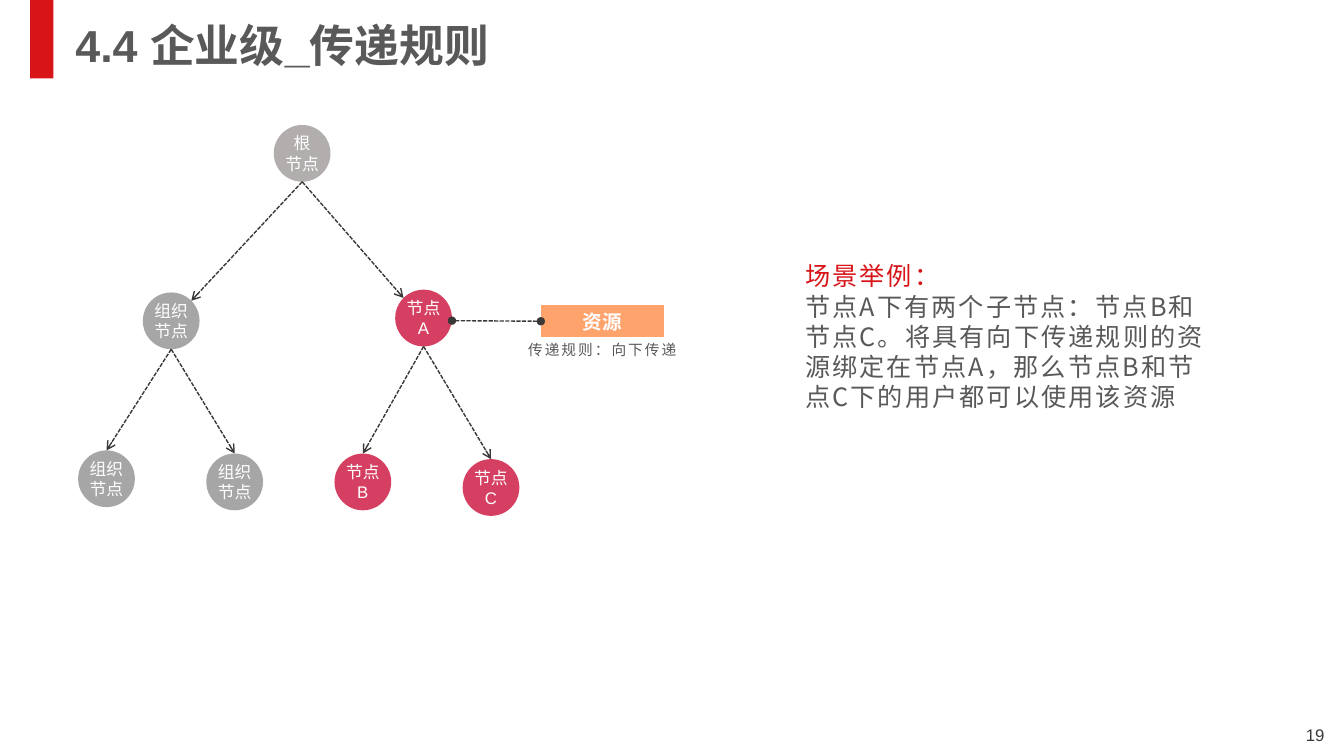
from math import sqrt

from lxml.etree import SubElement
from pptx import Presentation
from pptx.dml.color import RGBColor
from pptx.enum.dml import MSO_LINE
from pptx.enum.shapes import MSO_CONNECTOR, MSO_SHAPE
from pptx.enum.text import MSO_ANCHOR, MSO_AUTO_SIZE, PP_ALIGN
from pptx.oxml.ns import qn
from pptx.util import Cm, Pt

COLORS = {
    "red": "D71418",
    "dark": "3B3838",
    "text": "595959",
    "root": "B2AEAE",
    "gray": "A6A6A6",
    "pink": "D54062",
    "orange": "FFA36C",
    "white": "FFFFFF",
}
LATIN = "Arial"
CJK = "Noto Sans CJK SC"
DIAMETER = 1.43
RADIUS = DIAMETER / 2
DIAGONAL = RADIUS / sqrt(2)


def rgb(name):
    return RGBColor.from_string(COLORS[name])


def write(frame, text, size, color="text", font=CJK, bold=False, align=PP_ALIGN.LEFT,
          anchor=MSO_ANCHOR.TOP, spacing=1.0, tracking=0, inset=0.25, wrap=True,
          first_color=None):
    """Fill a text frame, one paragraph per line of text; tracking is in points."""
    frame.word_wrap = wrap
    frame.auto_size = MSO_AUTO_SIZE.NONE
    frame.vertical_anchor = anchor
    frame.margin_left = frame.margin_right = Cm(inset)
    frame.margin_top = frame.margin_bottom = Cm(inset / 2)
    for index, line in enumerate(text.split("\n")):
        paragraph = frame.paragraphs[0] if index == 0 else frame.add_paragraph()
        paragraph.alignment = align
        paragraph.line_spacing = spacing
        run = paragraph.add_run()
        run.text = line
        run.font.size = Pt(size)
        run.font.bold = bold
        run.font.name = font
        run.font.color.rgb = rgb(first_color if first_color and index == 0 else color)
        properties = run.font._element
        SubElement(properties, qn("a:ea")).set("typeface", CJK)
        if tracking:
            properties.set("spc", str(int(tracking * 100)))


class SlideBuilder:
    def __init__(self, slide):
        self.slide = slide

    def title(self, text, left, top, width, height):
        title = self.slide.shapes.title
        title.left, title.top, title.width, title.height = map(Cm, (left, top, width, height))
        write(title.text_frame, text, 32, font=LATIN, bold=True, anchor=MSO_ANCHOR.MIDDLE,
              spacing=0.9)

    def text(self, text, left, top, width, height, **style):
        box = self.slide.shapes.add_textbox(*map(Cm, (left, top, width, height)))
        write(box.text_frame, text, **style)

    def shape(self, kind, left, top, width, height, fill):
        shape = self.slide.shapes.add_shape(kind, *map(Cm, (left, top, width, height)))
        shape.shadow.inherit = False
        shape.fill.solid()
        shape.fill.fore_color.rgb = rgb(fill)
        shape.line.fill.background()
        return shape

    def node(self, text, left, top, fill):
        node = self.shape(MSO_SHAPE.OVAL, left, top, DIAMETER, DIAMETER, fill)
        write(node.text_frame, text, 12, color="white", font=LATIN, align=PP_ALIGN.CENTER,
              anchor=MSO_ANCHOR.MIDDLE, spacing=Pt(14.4), inset=0, wrap=False)
        return node

    def link(self, start, end, tail="arrow", head=None):
        """Draw a dashed connector between two points given in cm."""
        link = self.slide.shapes.add_connector(MSO_CONNECTOR.STRAIGHT, *map(Cm, start + end))
        link.line.color.rgb = rgb("dark")
        link.line.width = Pt(1)
        link.line.dash_style = MSO_LINE.SQUARE_DOT
        outline = link.line._get_or_add_ln()
        if head:
            SubElement(outline, qn("a:headEnd")).set("type", head)
        SubElement(outline, qn("a:tailEnd")).set("type", tail)
        SubElement(link._element.spPr, qn("a:effectLst"))
        return link


def main():
    presentation = Presentation()
    presentation.slide_width = Cm(33.87)
    presentation.slide_height = Cm(19.05)
    builder = SlideBuilder(presentation.slides.add_slide(presentation.slide_layouts[5]))

    builder.shape(MSO_SHAPE.RECTANGLE, 0.76, 0, 0.59, 1.98, "red")
    builder.title("4.4 企业级_传递规则", 1.65, 0.58, 29.21, 1.24)
    builder.text("19", 25.73, 18.01, 7.9, 1.02, size=12, color="dark", font=LATIN,
                 align=PP_ALIGN.RIGHT, anchor=MSO_ANCHOR.MIDDLE)

    # name: (text, left, top, fill, parent)
    tree = {
        "root": ("根\n节点", 6.9, 3.15, "root", None),
        "organization": ("组织\n节点", 3.6, 7.37, "gray", "root"),
        "a": ("节点\nA", 9.96, 7.3, "pink", "root"),
        "left unit": ("组织\n节点", 1.97, 11.35, "gray", "organization"),
        "right unit": ("组织\n节点", 5.2, 11.43, "gray", "organization"),
        "b": ("节点\nB", 8.43, 11.43, "pink", "a"),
        "c": ("节点\nC", 11.66, 11.57, "pink", "a"),
    }
    for text, left, top, fill, parent in tree.values():
        node = builder.node(text, left, top, fill)
        if parent is None:
            continue
        _, parent_left, parent_top, _, _ = tree[parent]
        start = (parent_left + RADIUS, parent_top + DIAMETER)
        center_x, center_y = left + RADIUS, top + RADIUS
        if parent == "root":
            side = 1 if center_x < start[0] else -1
            builder.link(start, (center_x + side * DIAGONAL, center_y - DIAGONAL))
        else:
            builder.link(start, (center_x, top)).end_connect(node, 0)

    resource = builder.shape(MSO_SHAPE.FLOWCHART_PROCESS, 13.63, 7.69, 3.1, 0.81, "orange")
    write(resource.text_frame, "资源", 14, color="white", bold=True, align=PP_ALIGN.CENTER,
          anchor=MSO_ANCHOR.MIDDLE)
    _, a_left, _, _, _ = tree["a"]
    binding = builder.link((13.63, 8.1), (a_left + DIAMETER, 8.08), tail="oval", head="oval")
    binding.begin_connect(resource, 1)

    builder.text("传递规则：向下传递", 13.06, 8.46, 4.85, 0.79, size=10.5, tracking=1.5)
    builder.text("场景举例：\n节点A下有两个子节点：节点B和节点C。将具有向下传递规则的资源绑定在节点A，"
                 "那么节点B和节点C下的用户都可以使用该资源",
                 20.04, 5.54, 10.87, 5.87, size=18, tracking=1.5, first_color="red",
                 anchor=MSO_ANCHOR.MIDDLE)

    presentation.save("out.pptx")


if __name__ == "__main__":
    main()
